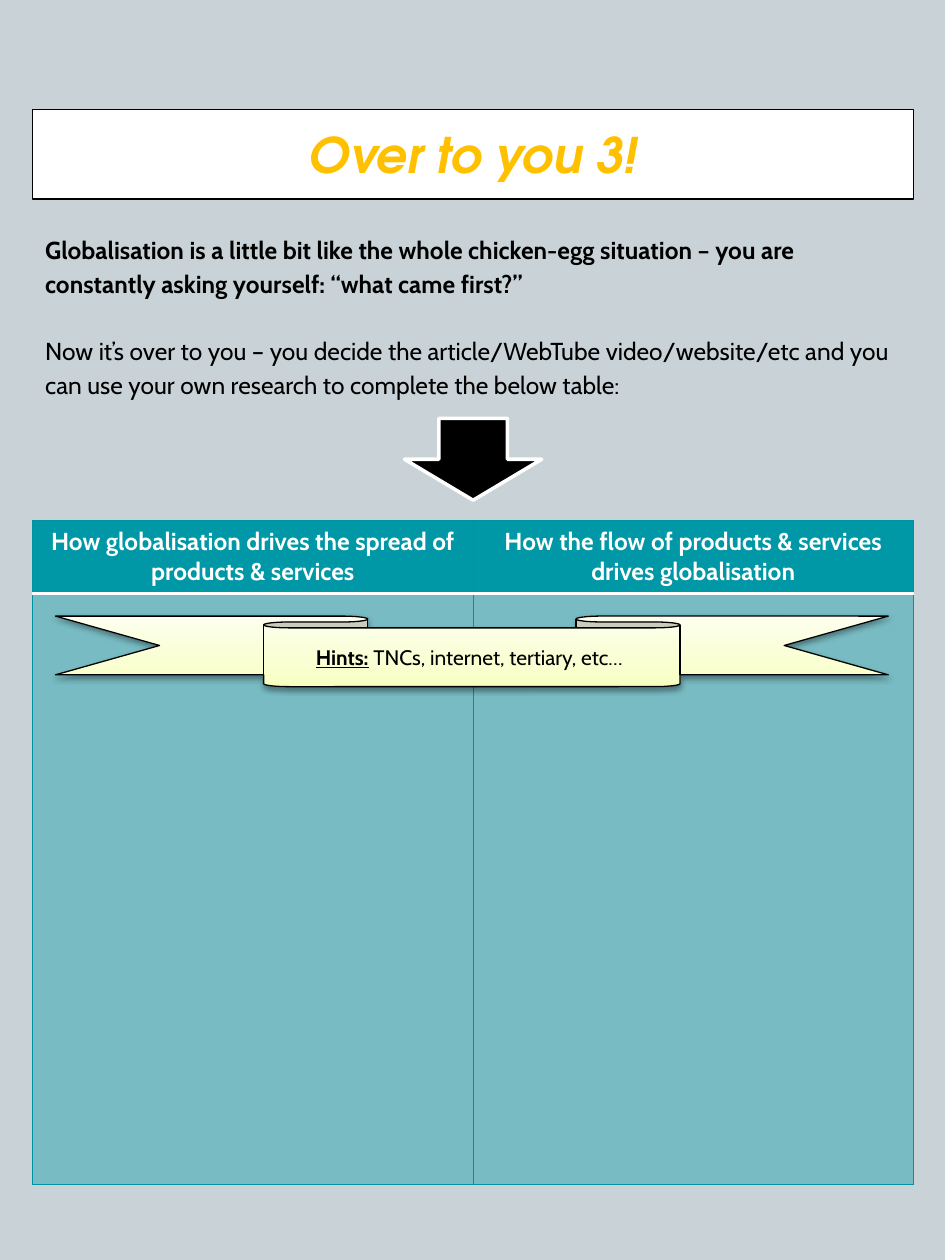
from lxml import etree
from pptx import Presentation
from pptx.dml.color import RGBColor
from pptx.enum.shapes import MSO_SHAPE
from pptx.enum.text import MSO_ANCHOR, PP_ALIGN
from pptx.oxml import parse_xml
from pptx.oxml.ns import nsdecls, qn
from pptx.util import Inches, Pt

CENTER = PP_ALIGN.CENTER
MIDDLE, TOP = MSO_ANCHOR.MIDDLE, MSO_ANCHOR.TOP
ARROW, RIBBON = MSO_SHAPE.DOWN_ARROW, MSO_SHAPE.UP_RIBBON
RIBBON = MSO_SHAPE.DOWN_RIBBON
BLACK, WHITE, TEAL, EDGE = "000000", "FFFFFF", "0097A7", "0094A3"
LEFT, WIDE = 0.26, 6.99


def rgb(code):
    return RGBColor.from_string(code)


def xml(body):
    return parse_xml(body.replace(">", f" {nsdecls('a')}>", 1))


def solid(code):
    return f'<a:solidFill><a:srgbClr val="{code}"/></a:solidFill>'


def paint(shape, fill, line, width):
    if fill:
        shape.fill.solid()
        shape.fill.fore_color.rgb = rgb(fill)
    shape.line.color.rgb = rgb(line)
    shape.line.width = Pt(width)


def style(run, size, color=BLACK, bold=False, face="Cabin"):
    font = run.font
    font.size, font.bold, font.name = Pt(size), bold, face
    font.color.rgb = rgb(color)


def inset(frame, anchor):
    frame.word_wrap = True
    frame.vertical_anchor = anchor
    frame.margin_left = frame.margin_right = Inches(0.1)
    frame.margin_top = frame.margin_bottom = Inches(0.1)


def place(shape, box):
    shape.left, shape.top, shape.width, shape.height = map(Inches, box)


# Title banner
def title(slide, box):
    shape = slide.shapes.title
    place(shape, box)
    paint(shape, WHITE, BLACK, 0.75)
    frame = shape.text_frame
    frame.text = "Over to you 3!"
    inset(frame, MIDDLE)
    par = frame.paragraphs[0]
    par.alignment = CENTER
    run = par.runs[0]
    style(run, 28, "FFC000", True, "TeX Gyre Adventor")
    run.font.italic = True
    run.font._element.insert(0, xml(f'<a:ln w="15875">{solid(BLACK)}</a:ln>'))


# Introduction
def intro(slide, box):
    frame = slide.shapes.add_textbox(*map(Inches, box)).text_frame
    inset(frame, TOP)
    frame.text = (
        "Globalisation is a little bit like the whole chicken-egg situation – "
        "you are constantly asking yourself: “what came first?”\n"
        "Now it’s over to you – you decide the article/WebTube video/website/etc "
        "and you can use your own research to complete the below table:")
    first, second = frame.paragraphs
    second.space_before = Pt(19.3)
    for par in (first, second):
        par.line_spacing = 1.15
        style(par.runs[0], 14, bold=par is first)


# Arrow to the table
def arrow(slide, box):
    shape = slide.shapes.add_shape(ARROW, *map(Inches, box))
    shape.shadow.inherit = False
    paint(shape, BLACK, WHITE, 2)


def border(cell, sides):
    props = cell._tc.get_or_add_tcPr()
    for spot, (side, (color, width)) in enumerate(sides.items()):
        line = xml(f'<a:ln{side} w="{int(Pt(width))}">{solid(color)}</a:ln{side}>')
        props.insert(spot, line)


# Two-column table
def grid(slide, box, head):
    heads = ["How globalisation drives the spread of products & services",
             "How the flow of products & services drives globalisation"]
    table = slide.shapes.add_table(2, 2, *map(Inches, box)).table
    table.horz_banding = False
    table.rows[0].height = Inches(head)
    table.rows[1].height = Inches(box[3] - head)
    thin, thick = (EDGE, 0.75), (WHITE, 2)
    for col, text in enumerate(heads):
        top, low = table.cell(0, col), table.cell(1, col)
        for cell in (top, low):
            cell.fill.solid()
            cell.fill.fore_color.rgb = rgb(TEAL)
        tint = low._tc.tcPr.find(".//" + qn("a:srgbClr"))
        etree.SubElement(tint, qn("a:alpha"), val="40000")
        border(top, {"L": thin, "R": thin, "T": thin, "B": thick})
        border(low, {"L": thin, "R": thin, "T": thick, "B": thin})
        top.text_frame.text = text
        par = top.text_frame.paragraphs[0]
        par.alignment = CENTER
        style(par.runs[0], 14, WHITE, True)


# Ribbon with hints
def hints(slide, box):
    shape = slide.shapes.add_shape(RIBBON, *map(Inches, box))
    paint(shape, None, BLACK, 0.75)
    stops = [(0, "F7FFC0"), (35, "F9FFD3"), (100, "FDFFEE")]
    marks = "".join(f'<a:gs pos="{pos * 1000}"><a:srgbClr val="{code}"/></a:gs>'
                    for pos, code in stops)
    props = shape._element.spPr
    props.find(qn("a:ln")).addprevious(xml(
        f'<a:gradFill><a:gsLst>{marks}</a:gsLst>'
        '<a:lin ang="16200000" scaled="0"/></a:gradFill>'))
    props.append(xml(
        '<a:effectLst><a:outerShdw blurRad="39370" dist="20320" dir="5400000" '
        f'rotWithShape="0"><a:srgbClr val="{BLACK}"><a:alpha val="38000"/>'
        '</a:srgbClr></a:outerShdw></a:effectLst>'))
    frame = shape.text_frame
    frame.vertical_anchor = MIDDLE
    par = frame.paragraphs[0]
    par.alignment = CENTER
    for text, bold in (("Hints:", True), (" TNCs, internet, tertiary, etc… ", False)):
        run = par.add_run()
        run.text = text
        style(run, 12, bold=bold)
        run.font.underline = bold


def main():
    deck = Presentation()
    deck.slide_width, deck.slide_height = Inches(7.5), Inches(10)
    slide = deck.slides.add_slide(deck.slide_layouts[5])
    back = slide.background.fill
    back.solid()
    back.fore_color.rgb = rgb("C9D3D7")
    title(slide, (LEFT, 0.87, WIDE, 0.71))
    intro(slide, (LEFT, 1.73, WIDE, 1.55))
    arrow(slide, (3.21, 3.32, 1.09, 0.65))
    grid(slide, (LEFT, 4.13, WIDE, 5.27), 0.58)
    hints(slide, (0.44, 4.89, 6.61, 0.56))
    deck.save("out.pptx")


if __name__ == "__main__":
    main()
